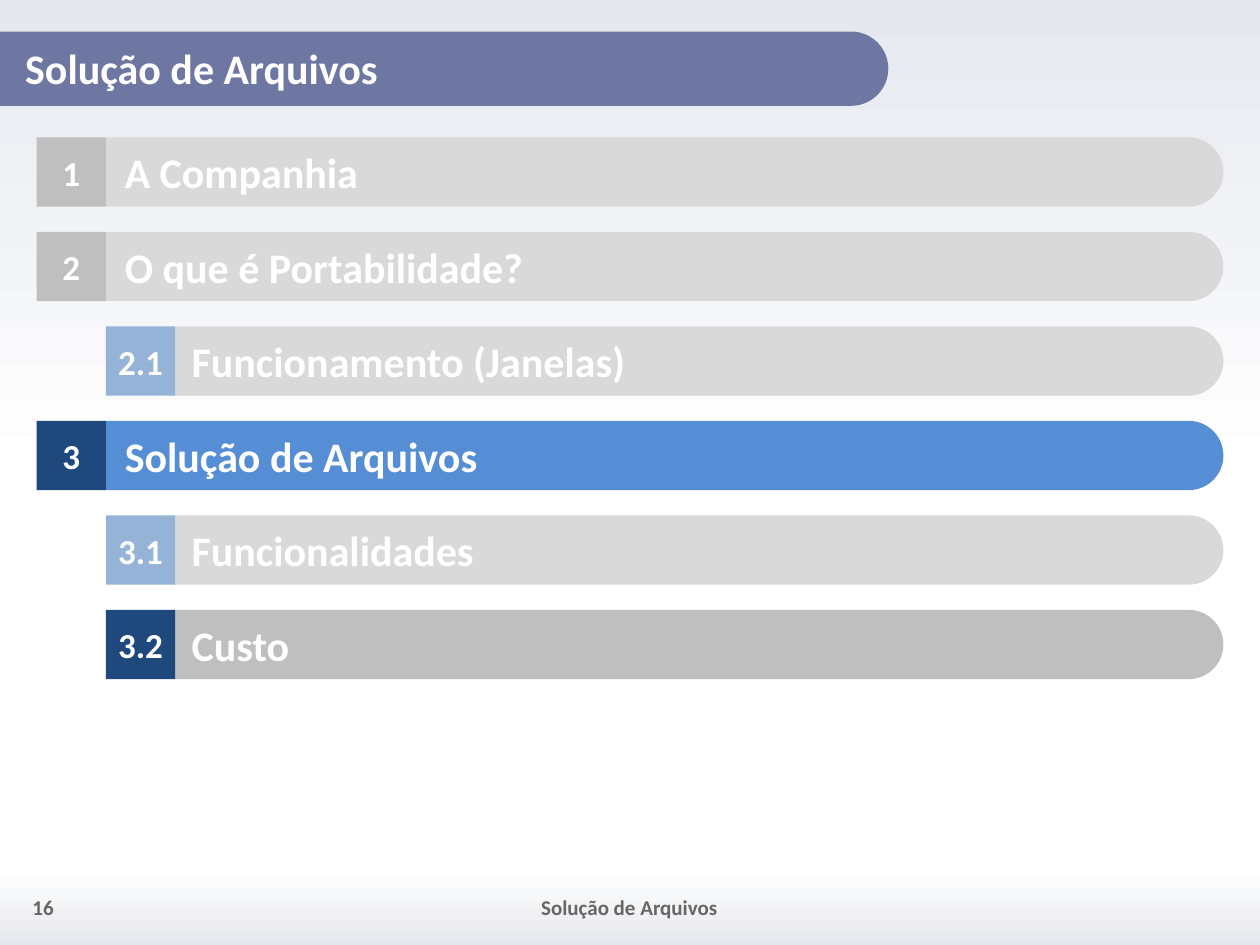
from pptx import Presentation
from pptx.dml.color import RGBColor
from pptx.enum.shapes import MSO_SHAPE
from pptx.enum.text import MSO_ANCHOR, PP_ALIGN
from pptx.util import Inches, Pt

RECTANGLE = MSO_SHAPE.RECTANGLE
ROUNDED = MSO_SHAPE.ROUNDED_RECTANGLE
ROUNDED_TOP = MSO_SHAPE.ROUND_2_SAME_RECTANGLE
MIDDLE, BOTTOM = MSO_ANCHOR.MIDDLE, MSO_ANCHOR.BOTTOM
LEFT, CENTER = PP_ALIGN.LEFT, PP_ALIGN.CENTER
SIDES = ("margin_left", "margin_top", "margin_right", "margin_bottom")


def color(value):
    return RGBColor.from_string(value)


def write(shape, text, size, text_color, align, anchor, insets):
    frame = shape.text_frame
    frame.word_wrap = True
    frame.vertical_anchor = anchor
    for side, inset in zip(SIDES, insets):
        setattr(frame, side, Inches(inset))
    paragraph = frame.paragraphs[0]
    paragraph.text = text
    paragraph.alignment = align
    font_format = {"name": "Calibri", "size": Pt(size), "bold": True}
    for name, value in font_format.items():
        setattr(paragraph.font, name, value)
    paragraph.font.color.rgb = color(text_color)


presentation = Presentation()
presentation.slide_width = Inches(10)
presentation.slide_height = Inches(7.5)
slide = presentation.slides.add_slide(presentation.slide_layouts[6])
shapes = slide.shapes

footer_band = shapes.add_shape(RECTANGLE, Inches(0), Inches(6.9), Inches(10), Inches(0.6))
footer_band.shadow.inherit = False
footer_band.line.fill.background()

gradients = [
    (slide.background.fill, 270, [(0, "E5E8EF"), (0.5, "FFFFFF")]),
    (footer_band.fill, 90, [(0, "E7E8ED"), (1, "FFFFFF")]),
]
for fill, angle, stops in gradients:
    fill.gradient()
    fill.gradient_angle = angle
    for stop, (position, value) in zip(fill.gradient_stops, stops):
        stop.position = position
        stop.color.rgb = color(value)

title_bar = shapes.add_shape(ROUNDED_TOP, Inches(3.23), Inches(-2.98), Inches(0.59), Inches(7.05))
title_bar.rotation = 90
title_bar.adjustments[0] = 0.5
title_bar.adjustments[1] = 0
title_bar.shadow.inherit = False
title_bar.fill.solid()
title_bar.fill.fore_color.rgb = color("6E77A2")
title_bar.line.fill.background()

section_title = "Solução de Arquivos"
footer_insets = (0.1, 0.05, 0.1, 0.05)
labels = [
    (0, 0, 10, 0.84, section_title, 24, "FFFFFF", LEFT, BOTTOM, (0.2, 0, 0.2, 0.1)),
    (1.95, 7, 6.09, 0.4, section_title, 12, "666666", CENTER, MIDDLE, footer_insets),
    (0.16, 7, 0.7, 0.4, "16", 12, "666666", LEFT, MIDDLE, footer_insets),
]
for left, top, width, height, *text_format in labels:
    box = shapes.add_textbox(Inches(left), Inches(top), Inches(width), Inches(height))
    write(box, *text_format)

agenda = [
    ("1", "A Companhia", "BFBFBF", "D9D9D9"),
    ("2", "O que é Portabilidade?", "BFBFBF", "D9D9D9"),
    ("2.1", "Funcionamento (Janelas)", "95B3D7", "D9D9D9"),
    ("3", section_title, "1F497D", "558ED5"),
    ("3.1", "Funcionalidades", "95B3D7", "D9D9D9"),
    ("3.2", "Custo", "1F497D", "BFBFBF"),
]
first_top, row_step, row_height = 1.09, 0.75, 0.55
bar_right = 9.71

for row, (number, topic, number_fill, bar_fill) in enumerate(agenda):
    top = first_top + row * row_step
    number_left, bar_left = (0.84, 1.13) if "." in number else (0.29, 0.6)
    parts = [
        (ROUNDED, bar_left, bar_right - bar_left, bar_fill,
         topic, 24, LEFT, (0.31, 0.05, 0.1, 0.05)),
        (RECTANGLE, number_left, row_height, number_fill,
         number, 20, CENTER, (0, 0, 0, 0)),
    ]
    for kind, left, width, fill_color, text, size, align, insets in parts:
        shape = shapes.add_shape(kind, Inches(left), Inches(top), Inches(width), Inches(row_height))
        if kind == ROUNDED:
            shape.adjustments[0] = 0.5
        shape.shadow.inherit = False
        shape.fill.solid()
        shape.fill.fore_color.rgb = color(fill_color)
        shape.line.fill.background()
        write(shape, text, size, "FFFFFF", align, MIDDLE, insets)

presentation.save("out.pptx")
